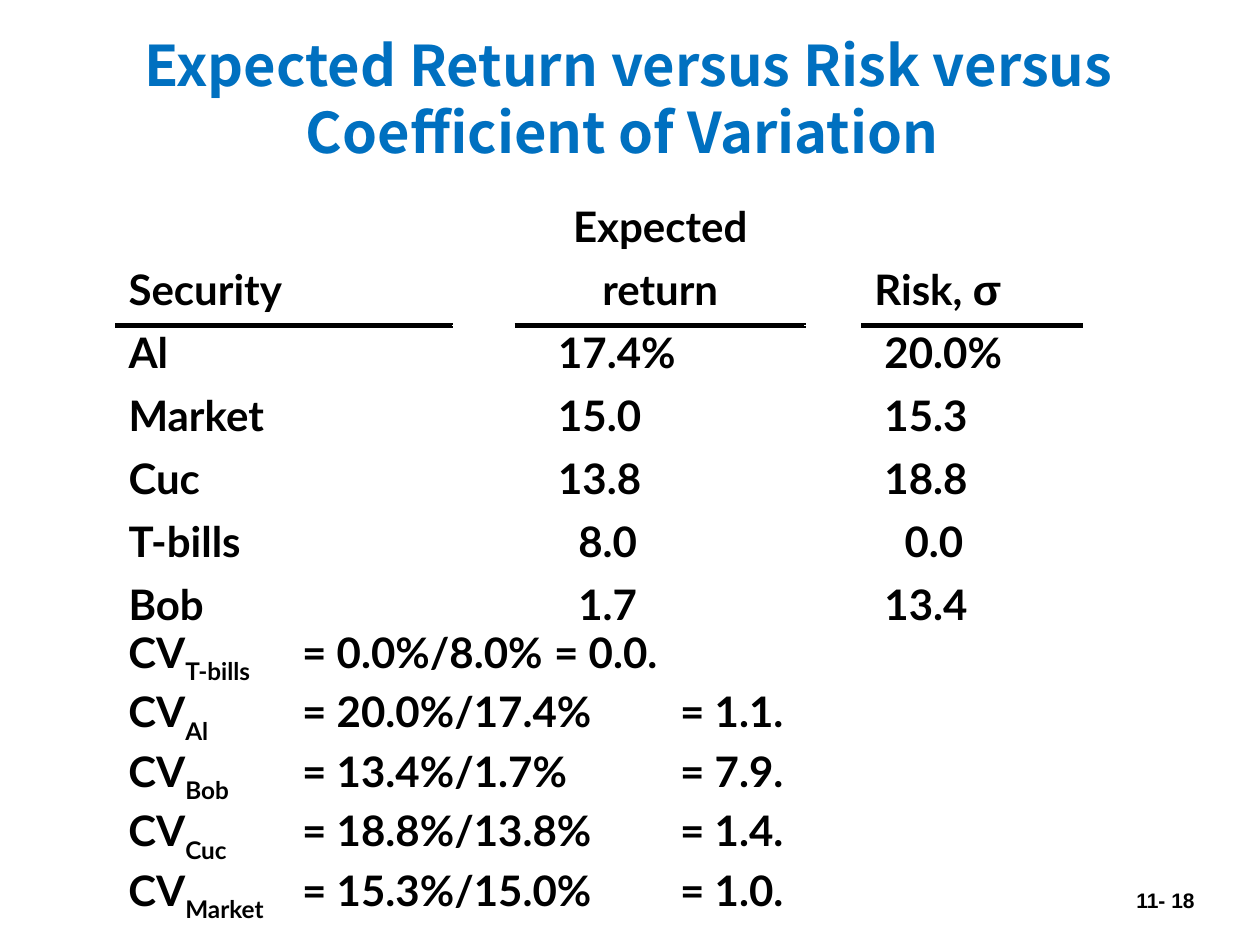
from typing import NamedTuple

from lxml import etree
from pptx import Presentation
from pptx.dml.color import RGBColor
from pptx.enum.text import MSO_ANCHOR, PP_ALIGN
from pptx.oxml.ns import qn
from pptx.util import Inches, Pt

LEFT, MID = PP_ALIGN.LEFT, PP_ALIGN.CENTER
CENTER = MSO_ANCHOR.MIDDLE
WIDE, HIGH = 10, 7.5
BLACK, BLUE = "000000", "0070C0"
BODY = {"name": "Lato", "size": Pt(24), "bold": True}
SIGMA = BODY | {"name": "Arial"}
HEAD = {"name": "Noto Sans CJK SC", "size": Pt(32), "bold": True}
PAGE = {"name": "Arial", "size": Pt(12), "bold": True}
COLS = (2.67, 0.5, 2.3, 0.45, 1.75)
ROW = 0.5
PAD, DIGIT = 0.1, 0.16


class Box(NamedTuple):
    left: float
    top: float
    width: float
    height: float

    def place(self) -> tuple:
        sides = (WIDE, HIGH, WIDE, HIGH)
        return tuple(Inches(part * side) for part, side in zip(self, sides))


class Asset(NamedTuple):
    name: str
    gain: str
    risk: str


class Ratio(NamedTuple):
    name: str
    terms: str
    value: str
    stop: float = 4.38


ASSETS = (
    Asset("Al", "17.4%", "20.0%"),
    Asset("Market", "15.0", "15.3"),
    Asset("Cuc", "13.8", "18.8"),
    Asset("T-bills", "8.0", "0.0"),
    Asset("Bob", "1.7", "13.4"),
)
RATIOS = (
    Ratio("T-bills", "0.0%/8.0%", "0.0", 3.38),
    Ratio("Al", "20.0%/17.4%", "1.1"),
    Ratio("Bob", "13.4%/1.7%", "7.9"),
    Ratio("Cuc", "18.8%/13.8%", "1.4"),
    Ratio("Market", "15.3%/15.0%", "1.0"),
)


def paint(color, code: str) -> None:
    color.rgb = RGBColor.from_string(code)


def write(para, text: str, look: dict, code: str = BLACK):
    run = para.add_run()
    run.text = text
    for key, value in look.items():
        setattr(run.font, key, value)
    paint(run.font.color, code)
    return run


def rule(cell) -> None:
    line = etree.Element(qn("a:lnB"), w=str(Pt(3)))
    fill = etree.SubElement(line, qn("a:solidFill"))
    etree.SubElement(fill, qn("a:srgbClr"), val=BLACK)
    cell._tc.get_or_add_tcPr().insert(0, line)


def put(cell, text: str, align=LEFT, shift: float = 0):
    cell.margin_left = Inches(PAD + shift)
    para = cell.text_frame.paragraphs[0]
    para.alignment = align
    para.line_spacing = 0.9
    write(para, text, BODY)
    return para


def number(cell, text: str, shift: float) -> None:
    whole = text.split(".")[0]
    put(cell, text, shift=shift + DIGIT * (2 - len(whole)))


def draw_table(slide, box: Box) -> None:
    count = len(ASSETS) + 2
    grid = slide.shapes.add_table(count, len(COLS), *box.place()).table
    grid.first_row = grid.horz_banding = False
    for col, width in zip(grid.columns, COLS):
        col.width = Inches(width)
    for row in grid.rows:
        row.height = Inches(ROW)
        for cell in row.cells:
            cell.fill.background()
    put(grid.cell(0, 2), "Expected", MID)
    put(grid.cell(1, 0), "Security")
    put(grid.cell(1, 2), "return", MID)
    write(put(grid.cell(1, 4), "Risk, "), "σ", SIGMA)
    for col in (0, 2, 4):
        rule(grid.cell(1, col))
    for row, asset in enumerate(ASSETS, 2):
        put(grid.cell(row, 0), asset.name)
        number(grid.cell(row, 2), asset.gain, 0.24)
        number(grid.cell(row, 4), asset.risk, 0.08)


def set_tabs(para, stops: tuple) -> None:
    tabs = etree.SubElement(para._p.get_or_add_pPr(), qn("a:tabLst"))
    for stop in stops:
        etree.SubElement(tabs, qn("a:tab"), pos=str(Inches(stop)), algn="l")


def draw_ratios(slide, box: Box) -> None:
    frame = slide.shapes.add_textbox(*box.place()).text_frame
    frame.word_wrap = True
    for row, ratio in enumerate(RATIOS):
        para = frame.add_paragraph() if row else frame.paragraphs[0]
        set_tabs(para, (1.38, ratio.stop))
        write(para, "CV", BODY)
        low = write(para, ratio.name, BODY)
        low.font._element.set("baseline", "-30000")
        write(para, f"\t= {ratio.terms}\t= {ratio.value}.", BODY)


def draw_title(slide, box: Box, text: str) -> None:
    title = slide.shapes.title
    title.left, title.top, title.width, title.height = box.place()
    title.text_frame.vertical_anchor = CENTER
    para = title.text_frame.paragraphs[0]
    para.alignment = MID
    write(para, text, HEAD, BLUE)


def draw_page(slide, box: Box, text: str) -> None:
    frame = slide.shapes.add_textbox(*box.place()).text_frame
    frame.word_wrap = False
    write(frame.paragraphs[0], text, PAGE)


def main() -> None:
    deck = Presentation()
    deck.slide_width, deck.slide_height = Inches(WIDE), Inches(HIGH)
    slide = deck.slides.add_slide(deck.slide_layouts[5])
    draw_title(slide, Box(0.074, 0.056, 0.85, 0.095),
               "Expected Return versus Risk versus Coefficient of Variation ")
    draw_table(slide, Box(0.092, 0.211, 0.767, 0.467))
    draw_ratios(slide, Box(0.092, 0.656, 0.858, 0.277))
    draw_page(slide, Box(0.892, 0.933, 0.068, 0.04), "11- 18")
    deck.save("out.pptx")


if __name__ == "__main__":
    main()
